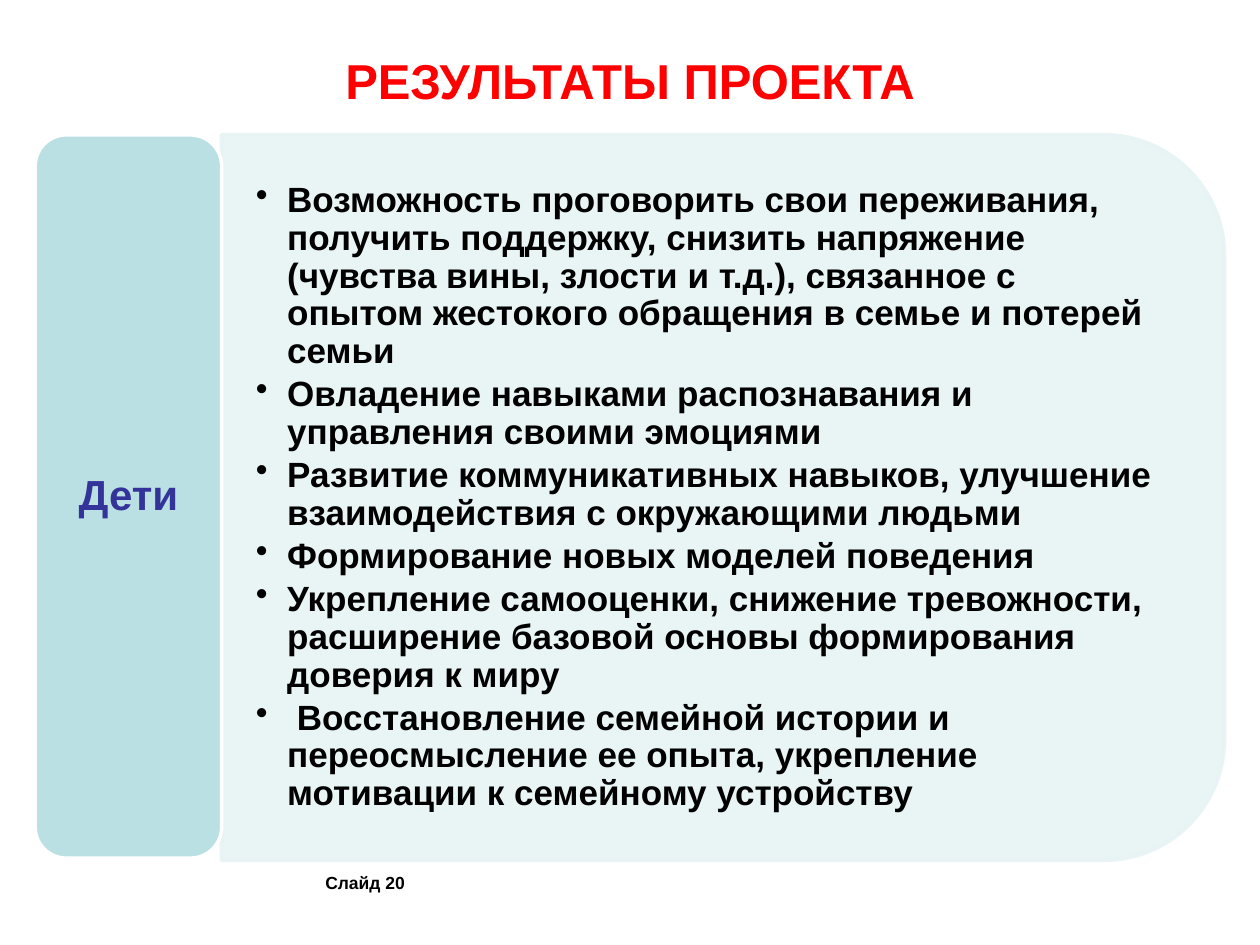
import dataclasses
import typing

import lxml.etree
import pptx
import pptx.dml.color
import pptx.enum.shapes
import pptx.enum.text
import pptx.oxml.ns
import pptx.util

Cm = pptx.util.Cm
Pt = pptx.util.Pt
RGB = pptx.dml.color.RGBColor
Align = pptx.enum.text.PP_ALIGN
Anchor = pptx.enum.text.MSO_ANCHOR
Kind = pptx.enum.shapes.MSO_SHAPE
qn = pptx.oxml.ns.qn

RED = RGB(0xFF, 0x00, 0x00)
BLACK = RGB(0x00, 0x00, 0x00)
WHITE = RGB(0xFF, 0xFF, 0xFF)
NAVY = RGB(0x33, 0x33, 0x99)
TEAL = RGB(0xBB, 0xE0, 0xE3)
PALE = RGB(0xE7, 0xF3, 0xF4)

GOALS = [
    "Возможность проговорить свои переживания, получить поддержку, "
    "снизить напряжение (чувства вины, злости и т.д.), связанное с "
    "опытом жестокого обращения в семье и потерей семьи",
    "Овладение навыками распознавания и управления своими эмоциями",
    "Развитие коммуникативных навыков, улучшение взаимодействия "
    "с окружающими людьми",
    "Формирование новых моделей поведения",
    "Укрепление самооценки, снижение тревожности, расширение базовой "
    "основы формирования доверия к миру",
    " Восстановление семейной истории и переосмысление ее опыта, "
    "укрепление мотивации к семейному устройству",
]


@dataclasses.dataclass
class Box:
    left: float
    top: float
    width: float
    height: float

    def place(self) -> list:
        return [Cm(n) for n in (self.left, self.top, self.width, self.height)]


@dataclasses.dataclass
class Style:
    size: int
    color: RGB
    align: Align = Align.LEFT
    anchor: Anchor = Anchor.MIDDLE
    pads: tuple = (0.25, 0.13, 0.25, 0.13)
    line: float = 1.0
    after: int = 0
    bullet: bool = False


def add_mark(para: typing.Any) -> None:
    props = para._p.get_or_add_pPr()
    props.set("marL", str(Cm(0.63)))
    props.set("indent", str(Cm(-0.63)))
    lxml.etree.SubElement(props, qn("a:buChar")).set("char", "•")


def write(shape: typing.Any, texts: list, style: Style) -> None:
    frame = shape.text_frame
    frame.word_wrap = True
    frame.vertical_anchor = style.anchor
    (frame.margin_left, frame.margin_top,
     frame.margin_right, frame.margin_bottom) = map(Cm, style.pads)
    for i, text in enumerate(texts):
        para = frame.add_paragraph() if i else frame.paragraphs[0]
        para.alignment = style.align
        para.line_spacing = style.line
        para.space_after = Pt(style.after)
        if style.bullet:
            add_mark(para)
        run = para.add_run()
        run.text = text
        run.font.name = "Arial"
        run.font.size = Pt(style.size)
        run.font.bold = True
        run.font.color.rgb = style.color


def add_text(slide: typing.Any, box: Box, texts: list, style: Style) -> None:
    write(slide.shapes.add_textbox(*box.place()), texts, style)


def add_panel(slide: typing.Any, kind: Kind, box: Box,
              fill: RGB, edge: RGB) -> typing.Any:
    shape = slide.shapes.add_shape(kind, *box.place())
    shape.shadow.inherit = False
    shape.fill.solid()
    shape.fill.fore_color.rgb = fill
    shape.line.color.rgb = edge
    shape.line.width = Pt(2)
    return shape


def fade(shape: typing.Any, share: int) -> None:
    for color in shape._element.spPr.iter(qn("a:srgbClr")):
        lxml.etree.SubElement(color, qn("a:alpha")).set("val", str(share * 1000))


def main() -> None:
    deck = pptx.Presentation()
    deck.slide_width, deck.slide_height = Cm(25.4), Cm(19.05)
    slide = deck.slides.add_slide(deck.slide_layouts[6])

    # Title
    add_text(slide, Box(3.3, 0.71, 18.8, 1.8), ["РЕЗУЛЬТАТЫ ПРОЕКТА"],
             Style(28, RED, Align.CENTER))

    # Slide label
    add_text(slide, Box(2.39, 17.12, 23.01, 0.56), ["Слайд 20"],
             Style(10, BLACK, anchor=Anchor.TOP, pads=(4.17, 0.48, 0, 0)))

    # Panel turned so that its round corners face right
    panel = add_panel(slide, Kind.ROUND_2_SAME_RECTANGLE,
                      Box(7.26, -0.08, 14.63, 20.22), PALE, PALE)
    panel.rotation = 90
    fade(panel, 90)

    # List of results
    add_text(slide, Box(4.47, 3.43, 19.51, 13.21), GOALS,
             Style(20, BLACK, pads=(0.69, 0.36, 0.69, 0.36),
                   line=0.9, after=3, bullet=True))

    # Group name
    group = add_panel(slide, Kind.ROUNDED_RECTANGLE,
                      Box(0.71, 2.72, 3.76, 14.58), TEAL, WHITE)
    write(group, ["Дети"], Style(24, NAVY, Align.CENTER, line=0.9))

    deck.save("out.pptx")


if __name__ == "__main__":
    main()
